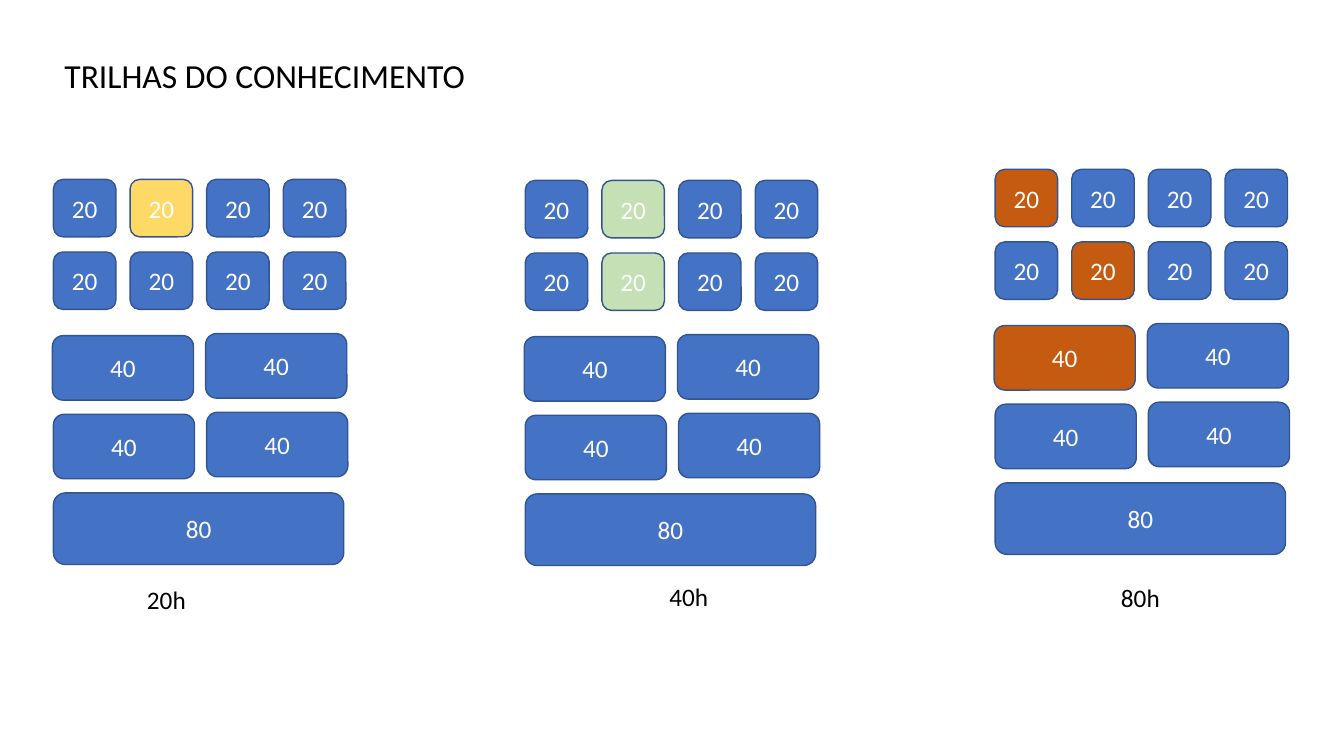
from pptx import Presentation
from pptx.dml.color import RGBColor
from pptx.enum.shapes import MSO_SHAPE as Shape
from pptx.enum.text import MSO_ANCHOR as Anchor, MSO_AUTO_SIZE as AutoSize, PP_ALIGN as Align
from pptx.util import Inches, Pt

BLUE = RGBColor(0x44, 0x72, 0xC4)
OUTLINE = RGBColor(0x32, 0x54, 0x91)
YELLOW = RGBColor(0xFF, 0xD9, 0x66)
GREEN = RGBColor(0xC5, 0xE0, 0xB4)
ORANGE = RGBColor(0xC5, 0x5A, 0x11)
WHITE = RGBColor(0xFF, 0xFF, 0xFF)
BLACK = RGBColor(0, 0, 0)
FONT = "Calibri"

# Content: highlighted modules are (hours, row, column)
TITLE = "TRILHAS DO CONHECIMENTO"
TRACKS = [
    {"label": "20h", "origin": (0.53, 1.78), "label_at": (1.36, 5.78),
     "color": YELLOW, "chosen": {("20", 0, 1)}},
    {"label": "40h", "origin": (5.21, 1.79), "label_at": (6.54, 5.75),
     "color": GREEN, "chosen": {("20", 0, 1), ("20", 1, 1)}},
    {"label": "80h", "origin": (9.87, 1.68), "label_at": (11.02, 5.76),
     "color": ORANGE, "chosen": {("20", 0, 0), ("20", 1, 1), ("40", 0, 0)}},
]

# Module grids, placed from the track's origin; each row and column
# moves by its (x, y) step
MODULES = [
    {"hours": "20", "rows": 2, "columns": 4, "start": (0, 0), "size": (0.62, 0.57),
     "row_step": (0, 0.72), "column_step": (0.76, 0)},
    {"hours": "40", "rows": 2, "columns": 2, "start": (-0.01, 1.55), "size": (1.4, 0.64),
     "row_step": (0.01, 0.78), "column_step": (1.52, -0.02)},
    {"hours": "80", "rows": 1, "columns": 1, "start": (0, 3.11), "size": (2.88, 0.71),
     "row_step": (0, 0), "column_step": (0, 0)},
]


def write(box, text, size, color):
    para = box.text_frame.paragraphs[0]
    span = para.add_run()
    span.text = text
    span.font.name = FONT
    span.font.size = Pt(size)
    span.font.color.rgb = color
    return para


def add_text(shapes, text, left, top, width, height, size):
    box = shapes.add_textbox(Inches(left), Inches(top), Inches(width), Inches(height))
    box.text_frame.word_wrap = True
    para = write(box, text, size, BLACK)
    para.line_spacing = 0.9
    return box


def add_module(shapes, hours, left, top, size, fill):
    box = shapes.add_shape(Shape.ROUNDED_RECTANGLE, Inches(left), Inches(top),
                           Inches(size[0]), Inches(size[1]))
    box.shadow.inherit = False
    box.fill.solid()
    box.fill.fore_color.rgb = fill
    box.line.color.rgb = OUTLINE
    box.line.width = Pt(1)
    box.text_frame.vertical_anchor = Anchor.MIDDLE
    write(box, hours, 18, WHITE).alignment = Align.CENTER


def add_track(page, track):
    shapes = page.shapes.add_group_shape().shapes
    for module in MODULES:
        for row in range(module["rows"]):
            for column in range(module["columns"]):
                left, top = (
                    track["origin"][axis] + module["start"][axis]
                    + row * module["row_step"][axis]
                    + column * module["column_step"][axis]
                    for axis in (0, 1))
                chosen = (module["hours"], row, column) in track["chosen"]
                add_module(shapes, module["hours"], left, top, module["size"],
                           track["color"] if chosen else BLUE)
    label = add_text(shapes, track["label"], *track["label_at"], 1.76, 0.37, 18)
    label.text_frame.auto_size = AutoSize.SHAPE_TO_FIT_TEXT
    label.text_frame.paragraphs[0].space_after = Pt(6)


def main():
    deck = Presentation()
    deck.slide_width = Inches(13.33)
    deck.slide_height = Inches(7.5)
    page = deck.slides.add_slide(deck.slide_layouts[6])

    # Learning tracks
    for track in TRACKS:
        add_track(page, track)

    # Title
    title = add_text(page.shapes, TITLE, 0.54, 0.39, 9.89, 0.76, 24)
    title.text_frame.vertical_anchor = Anchor.MIDDLE

    deck.save("out.pptx")


if __name__ == "__main__":
    main()
